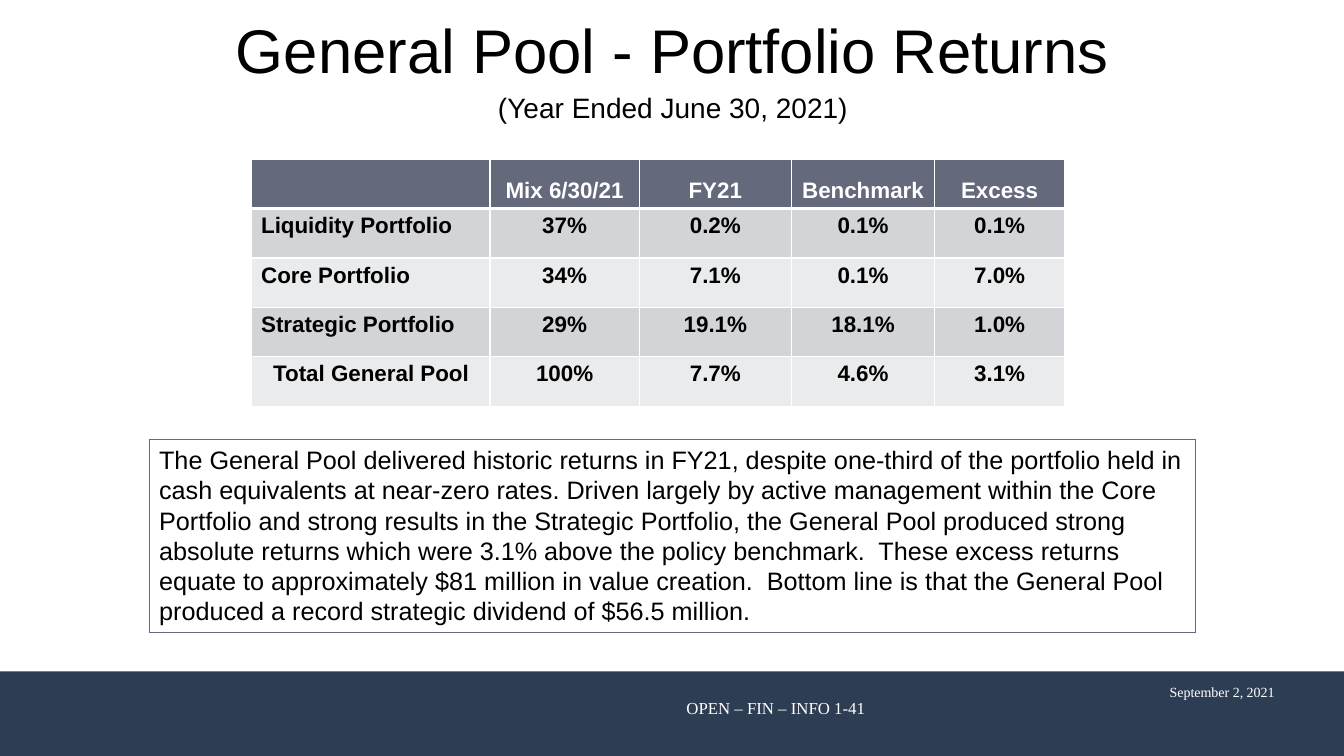
from lxml import etree
from pptx import Presentation
from pptx import util as u
from pptx.dml import color
from pptx.enum import shapes, text
from pptx.oxml import ns

COLOURS = {
    "navy": "2D3D54", "slate": "64697C", "band_dark": "D3D4D7",
    "band_light": "EAEBEC", "white": "FFFFFF", "black": "000000",
}
TITLE_LINES = [("General Pool - Portfolio Returns", 44, 0),
               ("(Year Ended June 30, 2021)", 20, 4)]
RETURNS = [
    ["", "Mix 6/30/21", "FY21", "Benchmark", "Excess"],
    ["Liquidity Portfolio", "37%", "0.2%", "0.1%", "0.1%"],
    ["Core Portfolio", "34%", "7.1%", "0.1%", "7.0%"],
    ["Strategic Portfolio", "29%", "19.1%", "18.1%", "1.0%"],
    ["Total General Pool", "100%", "7.7%", "4.6%", "3.1%"],
]
COLUMN_WIDTHS = [2.37, 1.48, 1.51, 1.42, 1.29]
COMMENTARY = (
    "The General Pool delivered historic returns in FY21, despite one-third of the "
    "portfolio held in cash equivalents at near-zero rates. Driven largely by active "
    "management within the Core Portfolio and strong results in the Strategic Portfolio, "
    "the General Pool produced strong absolute returns which were 3.1% above the policy "
    "benchmark.  These excess returns equate to approximately $81 million in value "
    "creation.  Bottom line is that the General Pool produced a record strategic "
    "dividend of $56.5 million."
)
ALIGN = text.PP_ALIGN
ANCHOR = text.MSO_ANCHOR


def rgb(name):
    """Return the named colour."""
    return color.RGBColor.from_string(COLOURS[name])


def inches(box):
    """Convert a box of numbers to lengths."""
    return [u.Inches(value) for value in box]


def write(paragraph, words, size, colour="black", align=ALIGN.LEFT, **formats):
    """Fill a paragraph and format its font."""
    paragraph.text = words
    paragraph.alignment = align
    for name, value in {"name": "Arial", "size": u.Pt(size), **formats}.items():
        setattr(paragraph.font, name, value)
    paragraph.font.color.rgb = rgb(colour)


def add_rectangle(slide, box):
    """Add a rectangle without a shadow."""
    shape = slide.shapes.add_shape(shapes.MSO_SHAPE.RECTANGLE, *inches(box))
    shape.shadow.inherit = False
    return shape


def add_footer(slide, box):
    """Draw the footer band with its date and page label."""
    left, top, width, height = box
    band = add_rectangle(slide, box)
    band.fill.solid()
    band.fill.fore_color.rgb = rgb("navy")
    band.line.fill.background()
    labels = [
        ("September 2, 2021", 10, ALIGN.RIGHT, (11.23, 0.07, 1.51, 0.27)),
        ("OPEN – FIN – INFO 1-41", 12, ALIGN.CENTER, (6.67, 0.21, 2.05, 0.3)),
    ]
    for words, size, align, (x, y, label_width, label_height) in labels:
        label = slide.shapes.add_textbox(
            *inches((left + x, top + y, label_width, label_height)))
        label.text_frame.word_wrap = True
        write(label.text_frame.paragraphs[0], words, size, "white", align,
              name="Times New Roman")


def add_title(slide, box):
    """Place the title and its subtitle line."""
    title = slide.shapes.title
    for name, value in zip(("left", "top", "width", "height"), inches(box)):
        setattr(title, name, value)
    frame = title.text_frame
    settings = {"auto_size": text.MSO_AUTO_SIZE.NONE, "word_wrap": True,
                "vertical_anchor": ANCHOR.MIDDLE, "margin_top": u.Inches(0.15)}
    for name, value in settings.items():
        setattr(frame, name, value)
    for index, (words, size, space) in enumerate(TITLE_LINES):
        paragraph = frame.add_paragraph() if index else frame.paragraphs[0]
        write(paragraph, words, size, align=ALIGN.CENTER)
        paragraph.space_before = u.Pt(space)


def add_borders(cell, widths):
    """Give a cell white borders of the given widths in points."""
    properties = cell._tc.get_or_add_tcPr()
    for side, width in widths.items():
        line = etree.SubElement(properties, ns.qn(f"a:ln{side}"), w=str(u.Pt(width)))
        fill = etree.SubElement(line, ns.qn("a:solidFill"))
        etree.SubElement(fill, ns.qn("a:srgbClr"), val=COLOURS["white"])


def add_returns_table(slide, box):
    """Build the table of portfolio returns."""
    table = slide.shapes.add_table(
        len(RETURNS), len(COLUMN_WIDTHS), *inches(box)).table
    for column, width in zip(table.columns, COLUMN_WIDTHS):
        column.width = u.Inches(width)
    for row_index, row in enumerate(RETURNS):
        table.rows[row_index].height = u.Inches(box[3] / len(RETURNS))
        header = row_index == 0
        band = "slate" if header else ("band_light", "band_dark")[row_index % 2]
        for column_index, words in enumerate(row):
            cell = table.cell(row_index, column_index)
            add_borders(cell, {"L": 1, "R": 1, "T": 3 if row_index == 1 else 1,
                               "B": 3 if header else 1})
            cell.fill.solid()
            cell.fill.fore_color.rgb = rgb(band)
            cell.vertical_anchor = ANCHOR.BOTTOM if header else ANCHOR.TOP
            write(cell.text_frame.paragraphs[0], words, 16,
                  "white" if header else "black",
                  ALIGN.CENTER if column_index else ALIGN.LEFT, bold=True)
    table.cell(len(RETURNS) - 1, 0).margin_left = u.Inches(0.22)


def add_commentary(slide, box):
    """Add the outlined commentary box."""
    shape = add_rectangle(slide, box)
    shape.fill.background()
    shape.line.color.rgb = rgb("slate")
    shape.line.width = u.Pt(0.75)
    shape.text_frame.word_wrap = True
    shape.text_frame.vertical_anchor = ANCHOR.TOP
    write(shape.text_frame.paragraphs[0], COMMENTARY, 18)


def main():
    """Build and save the presentation."""
    presentation = Presentation()
    presentation.slide_width = u.Inches(13.33)
    presentation.slide_height = u.Inches(7.5)
    slide = presentation.slides.add_slide(presentation.slide_layouts[5])
    add_footer(slide, (0, 6.66, 13.33, 0.84))
    add_title(slide, (0.02, 0, 13.31, 1.25))
    add_returns_table(slide, (2.49, 1.58, 8.07, 2.45))
    add_commentary(slide, (1.48, 4.36, 10.38, 1.92))
    presentation.save("out.pptx")


if __name__ == "__main__":
    main()
